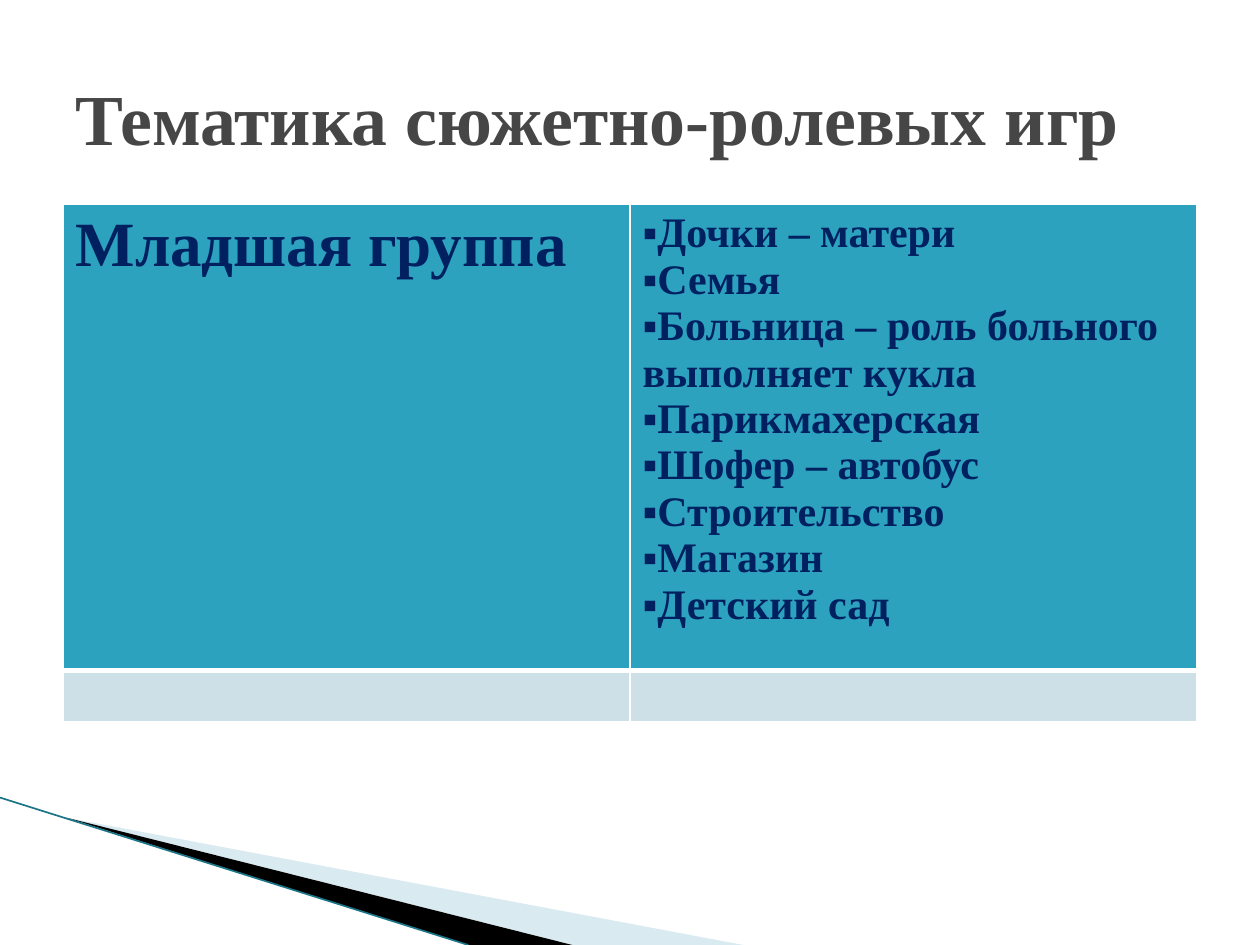
from dataclasses import dataclass

from lxml import etree
from pptx import Presentation
from pptx.dml.color import RGBColor
from pptx.enum.shapes import MSO_CONNECTOR
from pptx.enum.text import MSO_ANCHOR
from pptx.oxml.ns import qn
from pptx.util import Inches, Pt

MIDDLE = MSO_ANCHOR.MIDDLE
STRAIGHT = MSO_CONNECTOR.STRAIGHT


@dataclass(frozen=True)
class Theme:
    font: str = "Times New Roman"
    title: str = "464646"
    text: str = "002060"
    header: str = "2DA2BF"
    band: str = "CDE0E8"
    border: str = "FFFFFF"
    pale_wedge: str = "A0CBDC"
    dark_wedge: str = "000000"
    edge: str = "1B7587"
    title_size: int = 41
    group_size: int = 36
    game_size: int = 24


THEME = Theme()
SLIDE_WIDTH, SLIDE_HEIGHT = 10, 7.5
MARGIN = 0.05 * SLIDE_WIDTH
CONTENT_WIDTH = SLIDE_WIDTH - 2 * MARGIN
TITLE = "Тематика сюжетно-ролевых игр"
GROUP = "Младшая группа"
GAMES = [
    "Дочки – матери",
    "Семья",
    "Больница – роль больного выполняет кукла",
    "Парикмахерская",
    "Шофер – автобус",
    "Строительство",
    "Магазин",
    "Детский сад",
]


def rgb(color):
    return RGBColor.from_string(color)


def style_runs(paragraph, size, color):
    for run in paragraph.runs:
        run.font.name = THEME.font
        run.font.size = Pt(size)
        run.font.bold = True
        run.font.color.rgb = rgb(color)


def add_bullet(paragraph):
    properties = paragraph._p.get_or_add_pPr()
    properties.set("marL", "0")
    properties.set("indent", "0")
    etree.SubElement(properties, qn("a:buFont")).set("typeface", THEME.font)
    etree.SubElement(properties, qn("a:buChar")).set("char", "▪")


def add_borders(cell, top, bottom):
    properties = cell._tc.get_or_add_tcPr()
    for side, width in (("L", 1), ("R", 1), ("T", top), ("B", bottom)):
        border = etree.SubElement(properties, qn(f"a:ln{side}"), w=str(Pt(width)))
        fill = etree.SubElement(border, qn("a:solidFill"))
        etree.SubElement(fill, qn("a:srgbClr")).set("val", THEME.border)


def add_wedge(slide, points, color, opacity=100):
    start, *rest = [(Inches(x), Inches(y)) for x, y in points]
    builder = slide.shapes.build_freeform(*start)
    builder.add_line_segments(rest, close=True)
    wedge = builder.convert_to_shape()
    wedge.shadow.inherit = False
    wedge.fill.solid()
    wedge.fill.fore_color.rgb = rgb(color)
    wedge.line.fill.background()
    if opacity < 100:
        tint = wedge._element.spPr.find(qn("a:solidFill"))[0]
        etree.SubElement(tint, qn("a:alpha")).set("val", str(opacity * 1000))


def add_corner(slide, left, top, width, height):
    bottom = top + height
    tip = (left + 0.53, top + 0.16)
    pale_end, dark_end, edge_end = (left + width * share for share in (1, 0.77, 0.63))
    add_wedge(slide, [tip, (pale_end, bottom), (dark_end, bottom)], THEME.pale_wedge, 40)
    add_wedge(slide, [tip, (dark_end, bottom), (edge_end, bottom)], THEME.dark_wedge)
    edge = slide.shapes.add_connector(
        STRAIGHT, Inches(left), Inches(top), Inches(edge_end), Inches(bottom)
    )
    edge.line.color.rgb = rgb(THEME.edge)
    edge.line.width = Pt(0.95)
    etree.SubElement(edge._element.spPr, qn("a:effectLst"))


def add_title(slide, left, top, width, height):
    title = slide.shapes.add_textbox(
        Inches(left), Inches(top), Inches(width), Inches(height)
    )
    frame = title.text_frame
    frame.word_wrap = True
    frame.vertical_anchor = MIDDLE
    frame.text = TITLE
    style_runs(frame.paragraphs[0], THEME.title_size, THEME.title)


def add_games_table(slide, left, top, width, row_heights):
    table = slide.shapes.add_table(
        len(row_heights), 2, Inches(left), Inches(top),
        Inches(width), Inches(sum(row_heights)),
    ).table
    for column in table.columns:
        column.width = Inches(width / 2)
    looks = ((THEME.header, 1, 3), (THEME.band, 3, 1))
    for row, height, (color, upper, lower) in zip(table.rows, row_heights, looks):
        row.height = Inches(height)
        for cell in row.cells:
            add_borders(cell, upper, lower)
            cell.fill.solid()
            cell.fill.fore_color.rgb = rgb(color)

    group = table.cell(0, 0).text_frame
    group.text = GROUP
    style_runs(group.paragraphs[0], THEME.group_size, THEME.text)
    games = table.cell(0, 1).text_frame
    games.text = "\n".join(GAMES)
    for paragraph in games.paragraphs:
        add_bullet(paragraph)
        style_runs(paragraph, THEME.game_size, THEME.text)


def main():
    presentation = Presentation()
    presentation.slide_width = Inches(SLIDE_WIDTH)
    presentation.slide_height = Inches(SLIDE_HEIGHT)
    slide = presentation.slides.add_slide(presentation.slide_layouts[6])
    add_corner(slide, 0, 6.33, 5.9, SLIDE_HEIGHT - 6.33)
    add_games_table(slide, MARGIN, 1.62, CONTENT_WIDTH, (3.7, 0.41))
    add_title(slide, MARGIN, 0.3, CONTENT_WIDTH, 1.25)
    presentation.save("out.pptx")


if __name__ == "__main__":
    main()
